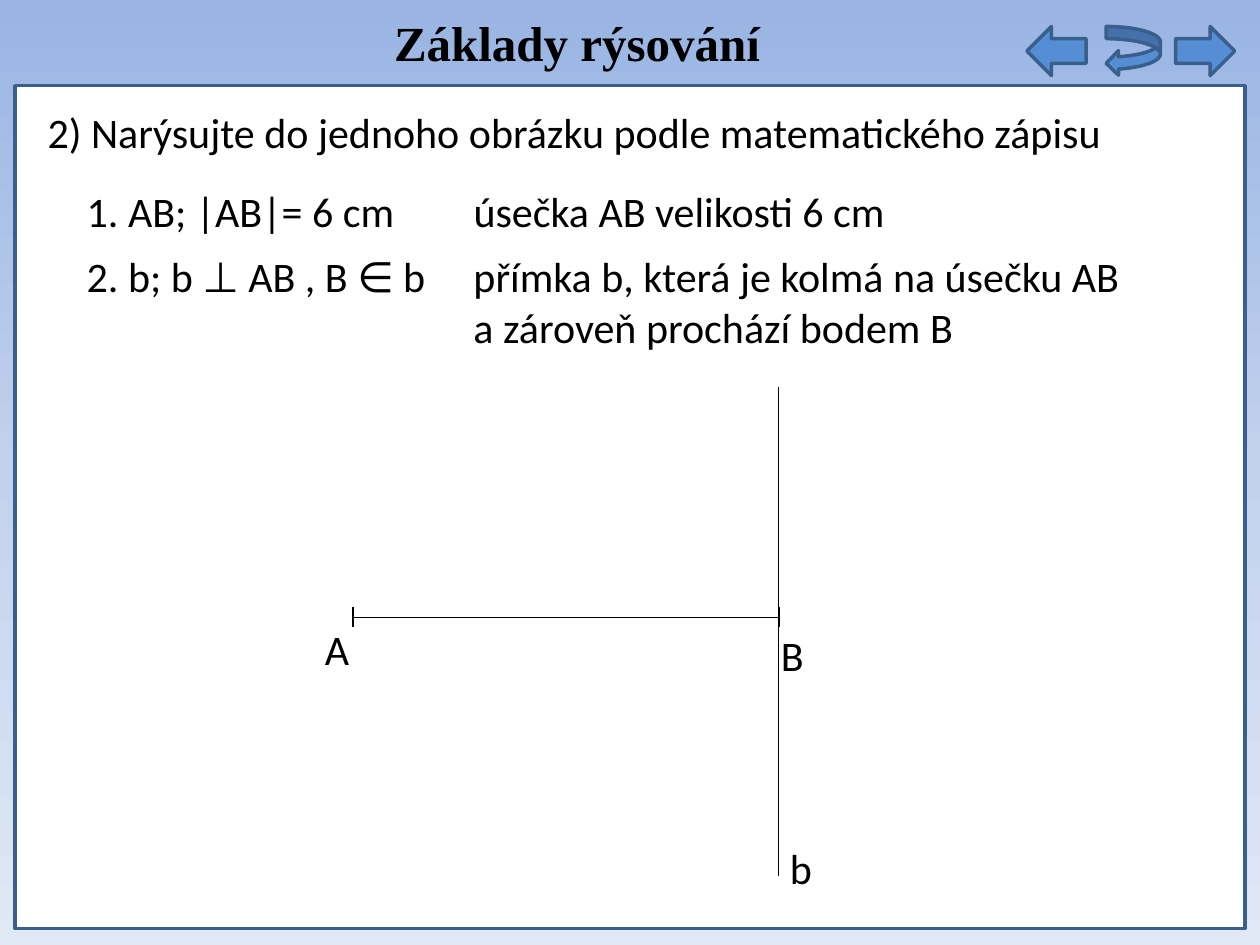
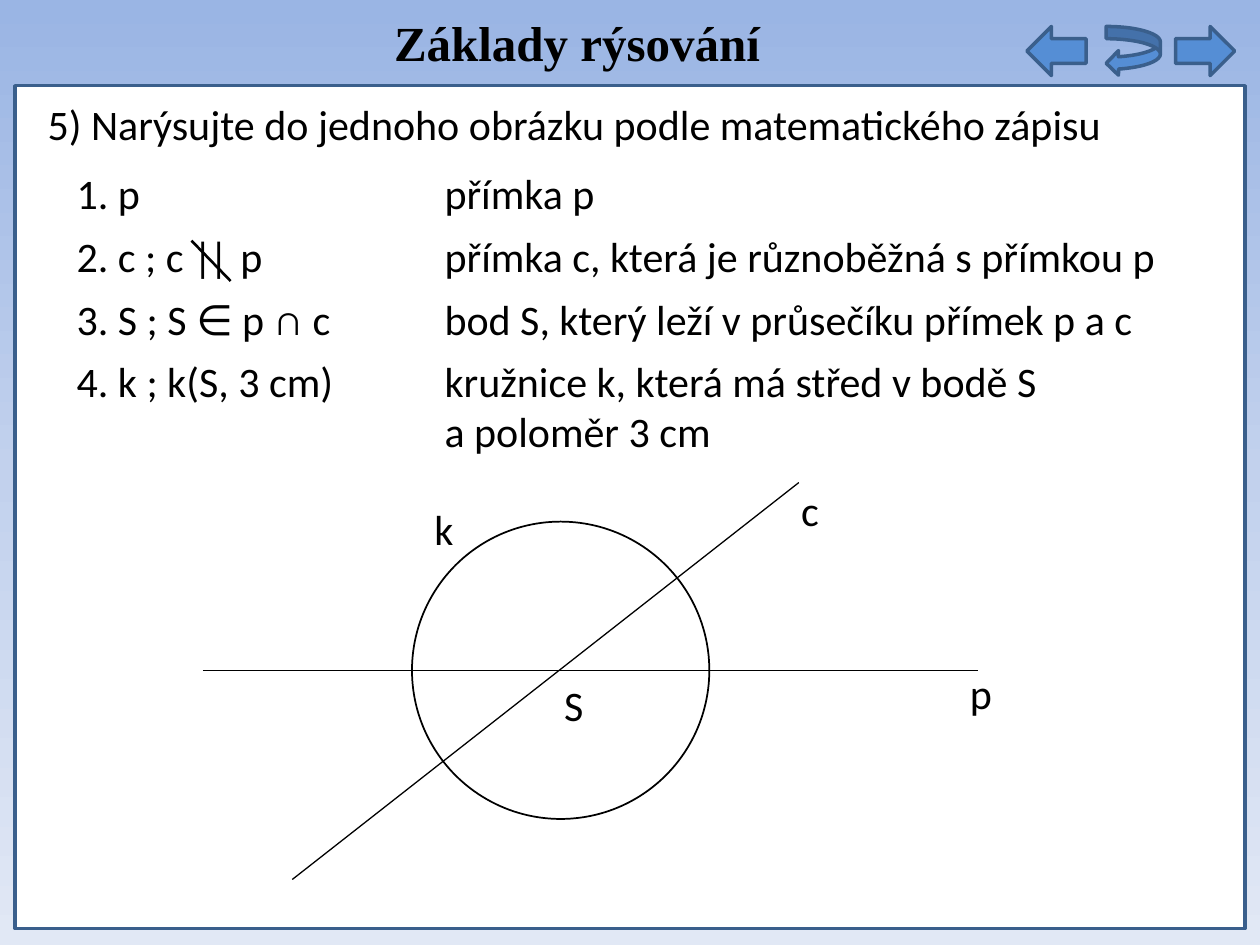
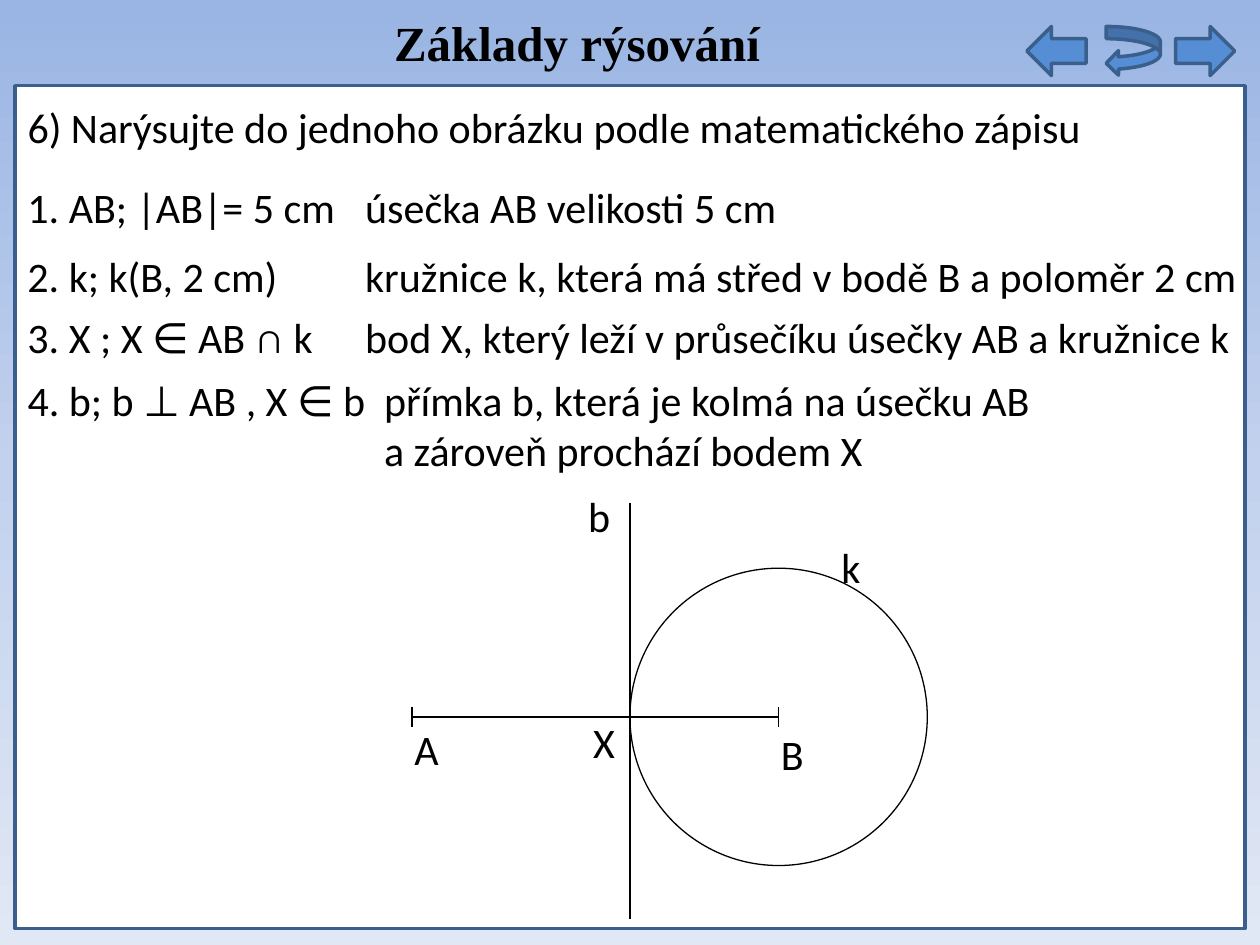
from copy import deepcopy

from pptx import Presentation
from pptx.dml.color import RGBColor
from pptx.enum.shapes import MSO_CONNECTOR, MSO_SHAPE
from pptx.enum.text import MSO_AUTO_SIZE
from pptx.oxml.ns import qn
from pptx.util import Emu, Pt

EMU_PER_PX = 9144  # 100 px to the inch
BLANK_LAYOUT = 6

BLACK = RGBColor(0x00, 0x00, 0x00)
WHITE = RGBColor(0xFF, 0xFF, 0xFF)
FRAME_BLUE = RGBColor(0x3A, 0x5F, 0x8C)
ARROW_BLUE = RGBColor(0x55, 0x8E, 0xD5)
SKY = [
    (0, RGBColor(0x9A, 0xB5, 0xE4)),
    (0.5, RGBColor(0xC2, 0xD1, 0xED)),
    (1, RGBColor(0xE1, 0xE8, 0xF5)),
]

BODY_FONT = "Calibri"
TITLE_FONT = "Times New Roman"

RECTANGLE = MSO_SHAPE.RECTANGLE
ELLIPSE = MSO_SHAPE.OVAL
LEFT_ARROW = MSO_SHAPE.LEFT_ARROW
RIGHT_ARROW = MSO_SHAPE.RIGHT_ARROW
RETURN_ARROW = MSO_SHAPE.CURVED_LEFT_ARROW
STRAIGHT = MSO_CONNECTOR.STRAIGHT
FIT_SHAPE = MSO_AUTO_SIZE.SHAPE_TO_FIT_TEXT

LINE_HEIGHT = 50
TWO_LINES = 91
LABEL_WIDTH = 63
TICK = 8
THIN = 0.75

TITLE = "Základy rýsování"
TASK = "Narýsujte do jednoho obrázku podle matematického zápisu"


def px(length):
    return Emu(length * EMU_PER_PX)


class Worksheet:
    def __init__(self):
        self.deck = Presentation()
        self.deck.slide_width = px(1000)
        self.deck.slide_height = px(750)
        self.page = None

    def new_page(self, number, left, top):
        """Start a slide with the shared frame, title, arrows and task line."""
        layout = self.deck.slide_layouts[BLANK_LAYOUT]
        self.page = self.deck.slides.add_slide(layout)
        self.background()
        self.shape(RECTANGLE, 12, 68, 976, 669, WHITE, FRAME_BLUE, 2)
        self.text(TITLE, 303, 5, 314, 57, TITLE_FONT, 28, bold=True, wrap=False)
        for kind, arrow_left, width in [
            (LEFT_ARROW, 815, 47),
            (RETURN_ARROW, 878, 43),
            (RIGHT_ARROW, 933, 47),
        ]:
            self.shape(kind, arrow_left, 21, width, 39, ARROW_BLUE, FRAME_BLUE, 2)
        self.text(f"{number}) {TASK}", left, top, 969)

    def background(self):
        fill = self.page.background.fill
        fill.gradient()
        fill.gradient_angle = 270
        stop_list = self.page.element.find(".//" + qn("a:gsLst"))
        stop_list.append(deepcopy(stop_list[0]))
        for stop, (position, color) in zip(fill.gradient_stops, SKY):
            stop.position = position
            stop.color.rgb = color

    def shape(self, kind, left, top, width, height, fill, color, weight):
        shape = self.page.shapes.add_shape(
            kind, px(left), px(top), px(width), px(height)
        )
        shape.shadow.inherit = False
        if fill is None:
            shape.fill.background()
        else:
            shape.fill.solid()
            shape.fill.fore_color.rgb = fill
        shape.line.color.rgb = color
        shape.line.width = Pt(weight)

    def circle(self, center_x, center_y, radius, weight):
        self.shape(ELLIPSE, center_x - radius, center_y - radius,
                   2 * radius, 2 * radius, None, BLACK, weight)

    def text(self, content, left, top, width, height=LINE_HEIGHT,
             font=BODY_FONT, size=24, bold=False, wrap=True):
        """Add a text box; content is a string or a list of (string, spacing)."""
        box = self.page.shapes.add_textbox(px(left), px(top), px(width), px(height))
        frame = box.text_frame
        frame.word_wrap = wrap
        frame.auto_size = FIT_SHAPE
        para = frame.paragraphs[0]
        para.font.name = font
        para.font.size = Pt(size)
        para.font.bold = bold
        para.font.color.rgb = BLACK
        spans = [(content, 0)] if isinstance(content, str) else content
        for words, spacing in spans:
            span = para.add_run()
            span.text = words
            if spacing:
                span.font._element.set("spc", str(spacing))

    def label(self, name, left, top):
        self.text(name, left, top, LABEL_WIDTH)

    def steps(self, formula_left, formula_width, meaning_left, rows):
        """Add rows of (top, formula, meaning, meaning width); the last has two lines."""
        for top, formula, meaning, meaning_width in rows:
            height = TWO_LINES if top == rows[-1][0] else LINE_HEIGHT
            self.text(formula, formula_left, top, formula_width)
            self.text(meaning, meaning_left, top, meaning_width, height)

    def line(self, x1, y1, x2, y2, weight=THIN):
        line = self.page.shapes.add_connector(
            STRAIGHT, px(x1), px(y1), px(x2), px(y2)
        )
        line.line.color.rgb = BLACK
        line.line.width = Pt(weight)
        properties = line._element.spPr
        properties.append(properties.makeelement(qn("a:effectLst"), {}))

    def segment(self, x1, x2, y, weight):
        """Draw a horizontal segment with a tick at each end."""
        self.line(x1, y, x2, y, weight)
        for x in (x1, x2):
            self.line(x, y - TICK, x, y + TICK, weight)


def perpendicular_at_b(sheet):
    sheet.new_page(2, 28, 80)
    sheet.steps(59, 323, 366, [
        (142, "1. AB; |AB|= 6 cm", "úsečka AB velikosti 6 cm", 638),
        (194, "2. b; b ⊥ AB , B ∈ b",
         "přímka b, která je kolmá na úsečku AB a zároveň prochází bodem B", 543),
    ])
    sheet.segment(280, 618, 490, 1)
    sheet.line(618, 307, 618, 695)
    sheet.label("A", 248, 490)
    sheet.label("B", 610, 495)
    sheet.label("b", 617, 664)


def circle_at_intersection(sheet):
    sheet.new_page(5, 28, 73)
    not_parallel = [("2. c ; c ", 0), ("||", -200), (" p", 150)]
    sheet.steps(51, 260, 343, [
        (128, "1. p", "přímka p", 260),
        (178, not_parallel, "přímka c, která je různoběžná s přímkou p", 669),
        (228, "3. S ; S ∈ p ∩ c", "bod S, který leží v průsečíku přímek p a c", 677),
        (277, "4. k ; k(S, 3 cm)",
         "kružnice k, která má střed v bodě S a poloměr 3 cm", 504),
    ])
    sheet.line(152, 191, 183, 223, 1.5)
    sheet.line(161, 532, 776, 532)
    sheet.line(232, 698, 634, 383)
    sheet.circle(445, 532, 118, 1)
    sheet.label("p", 760, 525)
    sheet.label("S", 438, 534)
    sheet.label("c", 626, 380)
    sheet.label("k", 335, 395)


def perpendicular_at_x(sheet):
    sheet.new_page(6, 12, 76)
    sheet.steps(12, 323, 280, [
        (139, "1. AB; |AB|= 5 cm", "úsečka AB velikosti 5 cm", 638),
        (194, "2. k; k(B, 2 cm)",
         "kružnice k, která má střed v bodě B a poloměr 2 cm", 720),
        (242, "3. X ; X ∈ AB ∩ k",
         "bod X, který leží v průsečíku úsečky AB a kružnice k", 709),
    ])
    sheet.steps(12, 299, 295, [
        (292, "4. b; b ⊥ AB , X ∈ b",
         "přímka b, která je kolmá na úsečku AB a zároveň prochází bodem X", 543),
    ])
    sheet.segment(327, 618, 569, THIN)
    sheet.line(500, 399, 500, 729)
    sheet.circle(618, 569, 118, THIN)
    sheet.label("A", 319, 569)
    sheet.label("B", 610, 573)
    sheet.label("X", 461, 564)
    sheet.label("k", 658, 425)
    sheet.label("b", 457, 384)


def main():
    sheet = Worksheet()
    perpendicular_at_b(sheet)
    circle_at_intersection(sheet)
    perpendicular_at_x(sheet)
    sheet.deck.save("out.pptx")


if __name__ == "__main__":
    main()
